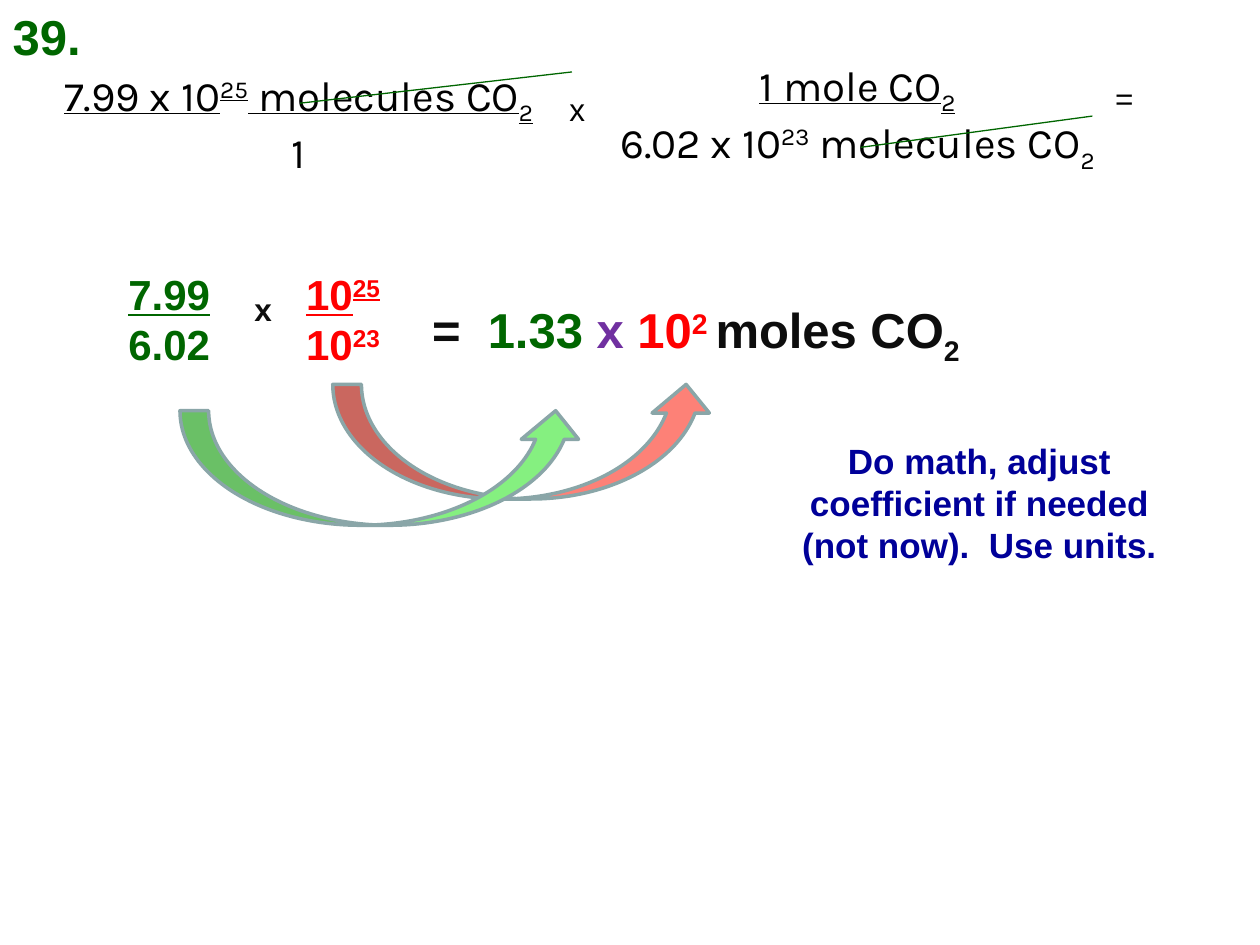
"""Build a worked mole-conversion slide with cancelled units and arrows."""
import pptx
import pptx.dml.color
import pptx.enum.shapes
import pptx.enum.text
import pptx.oxml
import pptx.oxml.ns
import pptx.util

Cm = pptx.util.Cm
Align = pptx.enum.text.PP_ALIGN

COLORS = {
    "green": "006600", "black": "000000", "ink": "0D0D0D", "red": "FF0000",
    "purple": "7030A0", "navy": "000099", "salmon": "FD8177",
    "lime": "85F080", "outline": "8AA6A8",
}
SUPER, SUB = 30000, -25000

TITLE = {"at": (0, 0, 2.34, 1.45), "style": ("Arial", 28, True, "green"),
         "lines": [[("39.",)]]}

# Each span is (text, baseline, colour); the top line of a fraction is underlined.
TEXTS = [
    {"at": (0.84, 1.27, 10.36, 2.31), "style": ("Karla", 24, False, "black"), "center": True,
     "lines": [[("7.99 x 10",), ("25", SUPER), (" molecules CO",), ("2", SUB)], [("1",)]]},
    {"at": (11.23, 1.7, 1.7, 1.02), "style": ("Arial", 18, False, "black"),
     "lines": [[("x",)]]},
    {"at": (12.09, 1.07, 10.39, 2.31), "style": ("Karla", 24, False, "black"), "center": True,
     "wrap": False,
     "lines": [[("1 mole CO",), ("2", SUB)],
               [("6.02 x 10",), ("23", SUPER), (" molecules CO",), ("2", SUB)]]},
    {"at": (22.23, 1.47, 3.17, 1.02), "style": ("Arial", 18, False, "black"),
     "lines": [[("=",)]]},
    {"at": (2.34, 5.28, 3.38, 2.31), "style": ("Arial", 24, True, "green"),
     "lines": [[("7.99",)], [("6.02",)]]},
    {"at": (4.88, 5.72, 1.47, 1.02), "style": ("Arial", 18, True, "ink"),
     "lines": [[("x",)]]},
    {"at": (5.92, 5.28, 4.88, 2.31), "style": ("Arial", 24, True, "red"),
     "lines": [[("10",), ("25", SUPER)], [("10",), ("23", SUPER)]]},
    {"at": (8.46, 5.92, 12.9, 1.45), "style": ("Arial", 28, True, "ink"),
     "lines": [[("=  ",), ("1.33", 0, "green"), (" x ", 0, "purple"), ("10", 0, "red"),
                ("2 ", SUPER, "red"), ("moles CO",), ("2", SUB)]]},
    {"at": (15.67, 8.74, 8.15, 2.82), "style": ("Arial", 20, True, "navy"), "center": True,
     "lines": [[("Do math, adjust coefficient if needed (not now).  Use units.",)]]},
]
STRIKES = [(6.05, 2.08, 11.53, 1.45), (17.35, 2.97, 22.02, 2.34)]
ARROWS = [((6.71, 7.75, 7.7, 2.31), "salmon"), ((3.63, 8.28, 8.15, 2.31), "lime")]


def rgb(name):
    """Return the named colour."""
    return pptx.dml.color.RGBColor.from_string(COLORS[name])


def write(box, item):
    """Fill a text box with the styled lines of an item."""
    frame = box.text_frame
    frame.word_wrap = item.get("wrap", True)
    frame.vertical_anchor = pptx.enum.text.MSO_ANCHOR.TOP
    frame.auto_size = pptx.enum.text.MSO_AUTO_SIZE.NONE
    para = frame.paragraphs[0]
    para.alignment = Align.CENTER if item.get("center") else Align.LEFT
    name, size, bold, color = item["style"]
    font = para.font
    font.name, font.size, font.bold = name, pptx.util.Pt(size), bold
    lines = item["lines"]
    one_color = all(len(part) < 3 for line in lines for part in line)
    if one_color:
        font.color.rgb = rgb(color)
    for row, line in enumerate(lines):
        if row:
            para.add_line_break()
        for text, baseline, tint in ((part + (0, color)[len(part) - 1:]) for part in line):
            span = para.add_run()
            span.text = text
            if row < len(lines) - 1:
                span.font.underline = True
            if not one_color:
                span.font.color.rgb = rgb(tint)
            if baseline:
                span.font._element.set("baseline", str(baseline))


def main():
    """Assemble and save the deck."""
    deck = pptx.Presentation()
    deck.slide_width, deck.slide_height = Cm(25.4), Cm(19.05)
    page = deck.slides.add_slide(deck.slide_layouts[5])
    shapes = page.shapes

    title = shapes.title
    title.left, title.top, title.width, title.height = map(Cm, TITLE["at"])
    write(title, TITLE)
    for item in TEXTS:
        write(shapes.add_textbox(*map(Cm, item["at"])), item)

    for ends in STRIKES:
        strike = shapes.add_connector(
            pptx.enum.shapes.MSO_CONNECTOR.STRAIGHT, *map(Cm, ends))
        strike.line.color.rgb = rgb("green")
        strike.line.width = pptx.util.Pt(0.75)
        strike._element.spPr.append(pptx.oxml.parse_xml(
            f'<a:effectLst {pptx.oxml.ns.nsdecls("a")}/>'))

    for place, color in ARROWS:
        arrow = shapes.add_shape(
            pptx.enum.shapes.MSO_SHAPE.CURVED_UP_ARROW, *map(Cm, place))
        arrow.shadow.inherit = False
        arrow.fill.solid()
        arrow.fill.fore_color.rgb = rgb(color)
        arrow.line.color.rgb = rgb("outline")
        arrow.line.width = pptx.util.Pt(2)

    deck.save("out.pptx")


if __name__ == "__main__":
    main()
